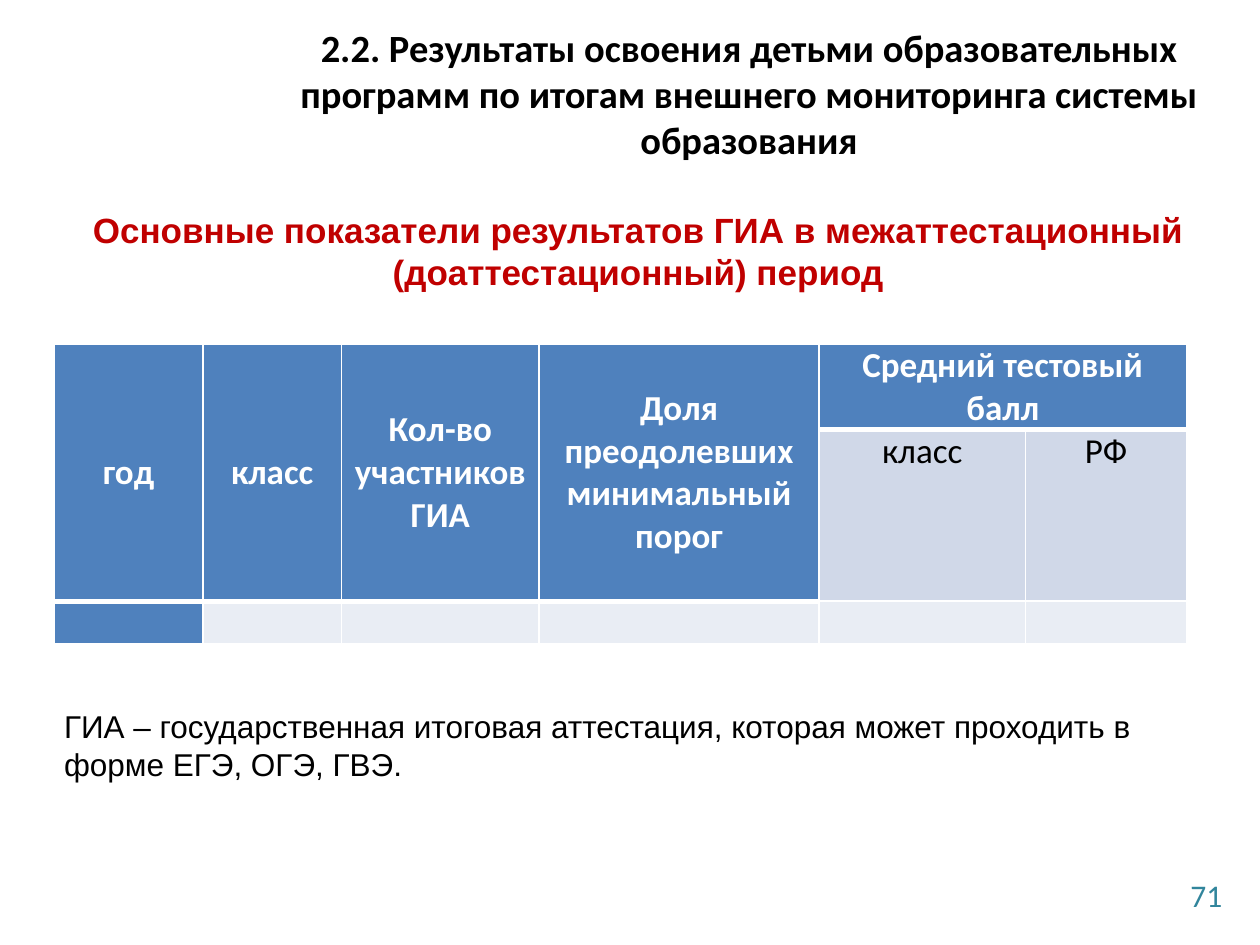
from dataclasses import dataclass

from lxml import etree
from pptx import Presentation, util as u
from pptx.dml.color import RGBColor
from pptx.enum import shapes, text
from pptx.oxml import ns


@dataclass(frozen=True)
class Theme:
    heading_font: str = "Calibri"
    body_font: str = "Arial"
    black: str = "000000"
    white: str = "FFFFFF"
    red: str = "C00000"
    teal: str = "31859C"
    header: str = "4F81BD"
    band: str = "D0D8E8"
    light: str = "E9EDF4"
    title_size: int = 22
    table_size: int = 20
    body_size: int = 18
    thin: int = 1
    thick: int = 3


def write(frame, content, font, size, color, bold=False, align=text.PP_ALIGN.LEFT,
          anchor=text.MSO_ANCHOR.MIDDLE):
    frame.word_wrap = True
    frame.auto_size = text.MSO_AUTO_SIZE.NONE
    frame.vertical_anchor = anchor
    paragraph = frame.paragraphs[0]
    paragraph.alignment = align
    run = paragraph.add_run()
    run.text = content
    run.font.name = font
    run.font.size = u.Pt(size)
    run.font.bold = bold
    run.font.color.rgb = RGBColor.from_string(color)


class SlideBuilder:
    columns, rows = 100, 75

    def __init__(self, presentation, theme):
        self.theme = theme
        self.unit_x = presentation.slide_width / self.columns
        self.unit_y = presentation.slide_height / self.rows
        self.slide = presentation.slides.add_slide(presentation.slide_layouts[5])

    def box(self, left, top, width, height):
        return (round(left * self.unit_x), round(top * self.unit_y),
                round(width * self.unit_x), round(height * self.unit_y))

    def title(self, area, content):
        shape = self.slide.shapes.title
        shape.left, shape.top, shape.width, shape.height = self.box(*area)
        write(shape.text_frame, content, self.theme.heading_font, self.theme.title_size,
              self.theme.black, bold=True, align=text.PP_ALIGN.CENTER)

    def label(self, area, content, **style):
        shape = self.slide.shapes.add_textbox(*self.box(*area))
        write(shape.text_frame, content, **style)

    def panel(self, area, content, bottom_inset=0.5, **style):
        shape = self.slide.shapes.add_shape(shapes.MSO_SHAPE.RECTANGLE, *self.box(*area))
        shape.shadow.inherit = False
        shape.fill.solid()
        shape.fill.fore_color.rgb = RGBColor.from_string(self.theme.white)
        shape.line.fill.background()
        shape.text_frame.margin_bottom = round(bottom_inset * self.unit_y)
        write(shape.text_frame, content, **style)

    def border(self, cell, edge, weight):
        properties = cell._tc.get_or_add_tcPr()
        line = etree.SubElement(properties, ns.qn(f"a:ln{edge}"), w=str(u.Pt(weight)))
        fill = etree.SubElement(line, ns.qn("a:solidFill"))
        etree.SubElement(fill, ns.qn("a:srgbClr"), val=self.theme.white)

    def cell(self, cell, fill, borders):
        for edge, weight in borders.items():
            self.border(cell, edge, weight)
        cell.fill.solid()
        cell.fill.fore_color.rgb = RGBColor.from_string(fill)
        cell.margin_left = cell.margin_right = round(0.7 * self.unit_x)
        cell.margin_top = cell.margin_bottom = 0

    def cell_text(self, cell, content, header):
        cell.vertical_anchor = text.MSO_ANCHOR.MIDDLE if header else text.MSO_ANCHOR.TOP
        paragraph = cell.text_frame.paragraphs[0]
        paragraph.alignment = text.PP_ALIGN.CENTER
        run = paragraph.add_run()
        run.text = content
        run.font.name = self.theme.heading_font
        run.font.size = u.Pt(self.theme.table_size)
        run.font.bold = header
        color = self.theme.white if header else self.theme.black
        run.font.color.rgb = RGBColor.from_string(color)

    def results_table(self, left, top, widths, heights, headers, subheaders):
        theme = self.theme
        area = self.box(left, top, sum(widths), sum(heights))
        table = self.slide.shapes.add_table(len(heights), len(widths), *area).table
        table.horz_banding = False
        for column, width in zip(table.columns, widths):
            column.width = round(width * self.unit_x)
        for row, height in zip(table.rows, heights):
            row.height = round(height * self.unit_y)
        group = len(headers) - 1
        fills = (
            [theme.header] * len(widths),
            [theme.header] * group + [theme.band] * len(subheaders),
            [theme.header] + [theme.light] * (len(widths) - 1),
        )
        for row, row_fills in enumerate(fills):
            for column, fill in enumerate(row_fills):
                header_end = 1 if column < group else 0
                top_weight = theme.thick if row == header_end + 1 else theme.thin
                bottom_weight = theme.thick if row == header_end else theme.thin
                borders = {"L": theme.thin, "R": theme.thin, "T": top_weight, "B": bottom_weight}
                self.cell(table.cell(row, column), fill, borders)
        for column, content in enumerate(headers):
            cell = table.cell(0, column)
            cell.merge(table.cell(1, column) if column < group else table.cell(0, len(widths) - 1))
            self.cell_text(cell, content, header=True)
        for column, content in enumerate(subheaders, group):
            self.cell_text(table.cell(1, column), content, header=False)


def main():
    theme = Theme()
    presentation = Presentation()
    presentation.slide_width, presentation.slide_height = u.Inches(10), u.Inches(7.5)
    builder = SlideBuilder(presentation, theme)
    builder.title((20.1, 1.3, 78.7, 12.2),
                  "2.2. Результаты освоения детьми образовательных программ "
                  "по итогам внешнего мониторинга системы образования")
    builder.label((74.7, 69, 23.3, 4), "71", font=theme.heading_font, size=theme.body_size,
                  color=theme.teal, align=text.PP_ALIGN.RIGHT)
    builder.results_table(
        4.3, 27.3, (11.8, 11, 15.7, 22.2, 16.4, 12.8), (6.8, 13.5, 3.4),
        ("год", "класс", "Кол-во участников ГИА", "Доля преодолевших минимальный порог",
         "Средний тестовый балл"),
        ("класс", "РФ"))
    builder.panel((4.2, 14.8, 92.9, 12.1),
                  "Основные показатели результатов ГИА в межаттестационный "
                  "(доаттестационный) период",
                  bottom_inset=2.5, font=theme.body_font, size=theme.table_size,
                  color=theme.red, bold=True, align=text.PP_ALIGN.CENTER)
    builder.panel((4.1, 55.6, 89.8, 7.1),
                  "ГИА – государственная итоговая аттестация, которая может проходить "
                  "в форме ЕГЭ, ОГЭ, ГВЭ.",
                  font=theme.body_font, size=theme.body_size, color=theme.black)
    presentation.save("out.pptx")


if __name__ == "__main__":
    main()
